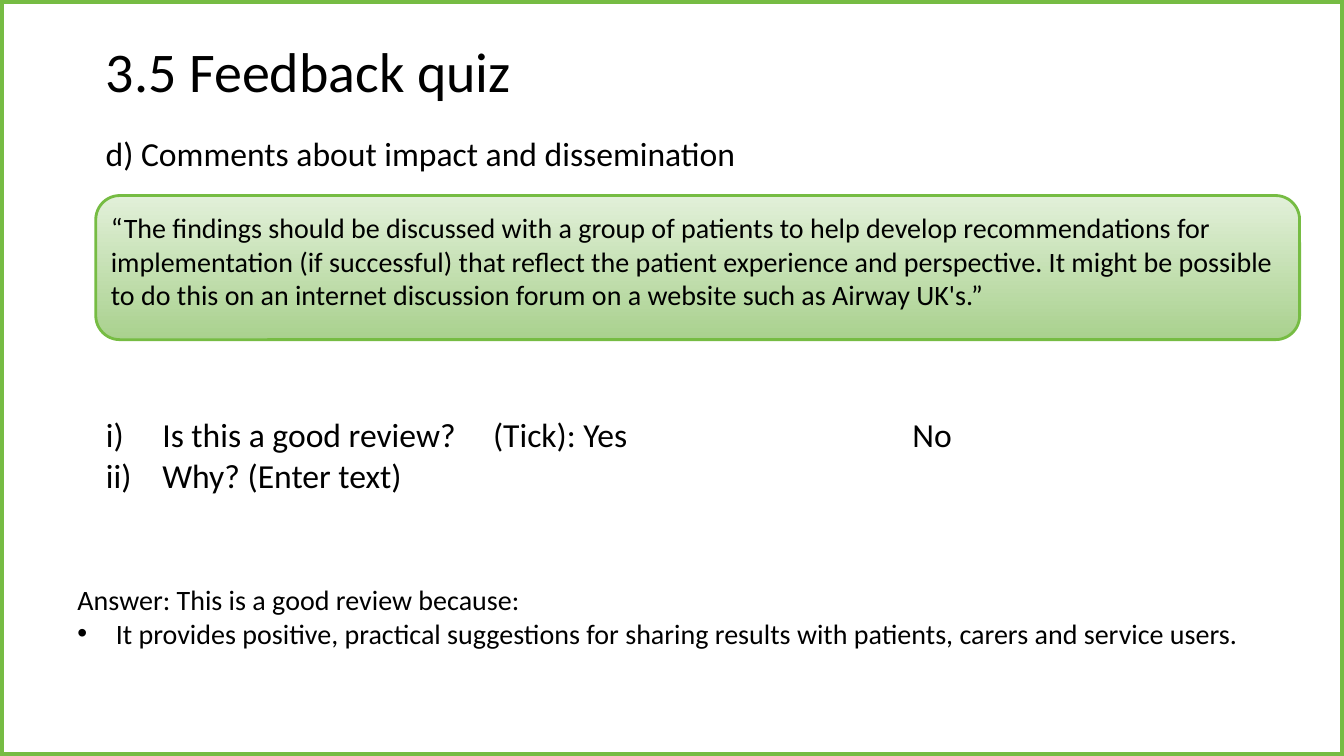
from dataclasses import dataclass

from lxml import etree
from pptx import Presentation
from pptx.dml.color import RGBColor
from pptx.enum import shapes, text
from pptx.oxml import ns
from pptx.util import Inches, Pt


@dataclass(frozen=True)
class Theme:
    font: str = "Calibri"
    ink: RGBColor = RGBColor(0x00, 0x00, 0x00)
    green: RGBColor = RGBColor(0x76, 0xBC, 0x43)
    pale: RGBColor = RGBColor(0xE2, 0xF0, 0xD9)
    mid: RGBColor = RGBColor(0xA9, 0xD1, 0x8E)
    title_size: int = 40
    question_size: int = 24
    text_size: int = 20


THEME = Theme()
WIDTH, HEIGHT = 13.33, 7.5


def place(shape, box):
    shape.left, shape.top, shape.width, shape.height = map(Inches, box)


def write(shape, lines, size, anchor=text.MSO_ANCHOR.TOP, line_spacing=1.0):
    frame = shape.text_frame
    frame.text = "\n".join(lines)
    frame.word_wrap = True
    frame.auto_size = text.MSO_AUTO_SIZE.NONE
    frame.vertical_anchor = anchor
    for paragraph in frame.paragraphs:
        paragraph.alignment = text.PP_ALIGN.LEFT
        paragraph.line_spacing = line_spacing
        paragraph.space_before = paragraph.space_after = Pt(0)
        for run in paragraph.runs:
            run.font.name = THEME.font
            run.font.size = Pt(size)
            run.font.color.rgb = THEME.ink
    return frame.paragraphs


def set_marker(paragraph, indent, tag, tabs=(), **attributes):
    """Give a paragraph a hanging bullet or number, and its tab stops."""
    properties = paragraph._p.get_or_add_pPr()
    properties.set("marL", str(Inches(indent)))
    properties.set("indent", str(-Inches(indent)))
    if tag == "buChar":
        etree.SubElement(properties, ns.qn("a:buFont"), typeface="Arial")
    etree.SubElement(properties, ns.qn(f"a:{tag}"), attributes)
    if tabs:
        tab_list = etree.SubElement(properties, ns.qn("a:tabLst"))
        for position in tabs:
            etree.SubElement(tab_list, ns.qn("a:tab"), pos=str(Inches(position)), algn="l")


def add_title(slide, box):
    place(slide.shapes.title, box)
    write(slide.shapes.title, ["3.5 Feedback quiz"], THEME.title_size,
          text.MSO_ANCHOR.MIDDLE, 0.9)


def add_text(slide, box, lines, size):
    return write(slide.shapes.add_textbox(*map(Inches, box)), lines, size)


def add_quote(slide, box):
    shape = slide.shapes.add_shape(shapes.MSO_SHAPE.ROUNDED_RECTANGLE, *map(Inches, box))
    shape.shadow.inherit = False
    shape.fill.gradient()
    shape.fill.gradient_angle = 270
    for stop, color in zip(shape.fill.gradient_stops, (THEME.pale, THEME.mid)):
        stop.color.rgb = color
    shape.line.color.rgb = THEME.green
    shape.line.width = Pt(2)
    frame = shape.text_frame
    frame.margin_left = frame.margin_right = Inches(0.08)
    frame.margin_top = frame.margin_bottom = Inches(0.08)
    write(shape, ["“The findings should be discussed with a group of patients to help develop "
                  "recommendations for implementation (if successful) that reflect the patient "
                  "experience and perspective. It might be possible to do this on an internet "
                  "discussion forum on a website such as Airway UK's.”"], THEME.text_size)


def add_questions(slide, box):
    body = slide.placeholders[1]
    place(body, box)
    questions = write(body, ["Is this a good review?\t(Tick): Yes\tNo", "Why? (Enter text)"],
                      THEME.question_size)
    for question in questions:
        set_marker(question, 0.56, "buAutoNum", tabs=(3.84, 8), type="romanLcParenR")


def add_answer(slide, box):
    heading, reason = add_text(
        slide, box,
        ["Answer: This is a good review because:",
         "It provides positive, practical suggestions for sharing results with patients, "
         "carers and service users."], THEME.text_size)
    set_marker(reason, 0.38, "buChar", char="•")


def add_border(slide, box):
    border = slide.shapes.add_shape(shapes.MSO_SHAPE.RECTANGLE, *map(Inches, box))
    border.shadow.inherit = False
    border.fill.background()
    border.line.color.rgb = THEME.green
    border.line.width = Pt(6)


def main():
    presentation = Presentation()
    presentation.slide_width, presentation.slide_height = Inches(WIDTH), Inches(HEIGHT)
    slide = presentation.slides.add_slide(presentation.slide_layouts[1])
    left = 0.95

    # Heading and topic
    add_title(slide, (left, 0.19, 11.5, 1.09))
    add_text(slide, (left, 1.27, 11.5, 1.08),
             ["d) Comments about impact and dissemination"], THEME.question_size)

    # Review comment, questions and answer
    add_quote(slide, (left, 1.94, 11.94, 1.43))
    add_questions(slide, (left, 4.06, 11.71, 0.99))
    add_answer(slide, (0.67, 5.73, 11.99, 1.47))

    # Slide frame
    add_border(slide, (0, 0, WIDTH, HEIGHT))
    presentation.save("out.pptx")


if __name__ == "__main__":
    main()
